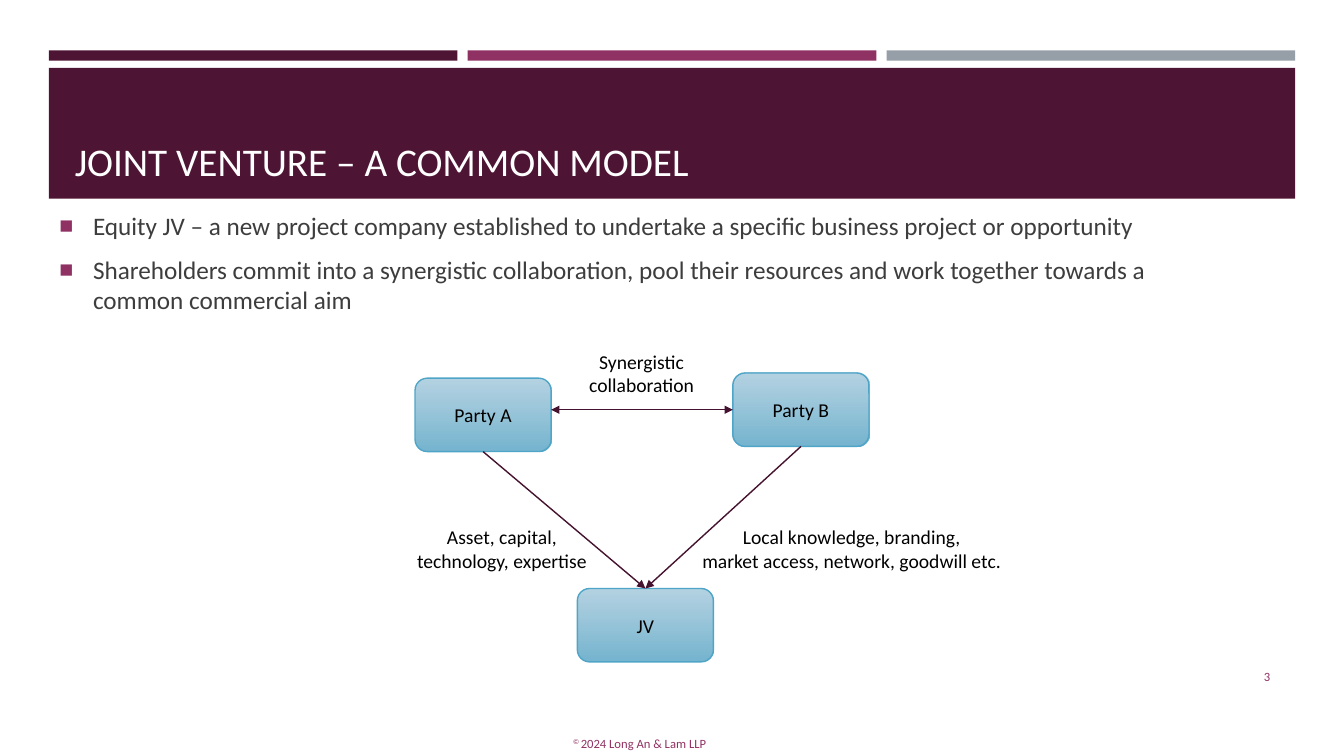
from lxml.etree import SubElement
from pptx import Presentation
from pptx.dml.color import RGBColor
from pptx.enum.shapes import MSO_CONNECTOR, MSO_SHAPE
from pptx.enum.text import MSO_ANCHOR, PP_ALIGN
from pptx.oxml.ns import qn
from pptx.util import Cm, Pt

FONT = "Calibri"
PLUM, ROSE, GREY = "4D1434", "903163", "969FA7"
ARROW, EDGE, BLACK = "45122F", "4FA5C7", "000000"


def paint(color, code):
    color.rgb = RGBColor.from_string(code)


def style(para, size, code, align):
    para.alignment = align
    para.font.name, para.font.size = FONT, Pt(size)
    paint(para.font.color, code)


def write(frame, text, size, code, align=PP_ALIGN.CENTER, anchor=MSO_ANCHOR.TOP):
    frame.word_wrap = True
    frame.vertical_anchor = anchor
    frame.text = text
    for para in frame.paragraphs:
        style(para, size, code, align)


def place(shape, left, top, width, height):
    shape.left, shape.top = Cm(left), Cm(top)
    shape.width, shape.height = Cm(width), Cm(height)


def add_text(slide, box, *args, **kwargs):
    text = slide.shapes.add_textbox(*map(Cm, box))
    write(text.text_frame, *args, **kwargs)
    return text


def add_bar(slide, box, code):
    bar = slide.shapes.add_shape(MSO_SHAPE.RECTANGLE, *map(Cm, box))
    bar.shadow.inherit = False
    bar.fill.solid()
    paint(bar.fill.fore_color, code)
    bar.line.fill.background()


def add_head(slide, left, top, width, height):
    # Three thin bars in equal columns
    gap = 0.26
    span = (width - 2 * gap) / 3
    for col, code in enumerate((PLUM, ROSE, GREY)):
        add_bar(slide, (left + col * (span + gap), top, span, 0.26), code)

    # Banner, placed in front of the tree so that the title stays on top
    add_bar(slide, (left, top + 0.44, width, height - 0.44), PLUM)
    title = slide.shapes.title
    slide.shapes._spTree.append(title._element)
    place(title, left + 0.4, top + 0.69, width - 0.8, height - 0.92)
    write(title.text_frame, "JOINT VENTURE – A COMMON MODEL", 28, "FFFFFF",
          PP_ALIGN.LEFT, MSO_ANCHOR.BOTTOM)


def add_list(slide, left, top, width, height):
    body = slide.placeholders[1]
    place(body, left, top, width, height)
    frame = body.text_frame
    frame.text = (
        "Equity JV – a new project company established to undertake "
        "a specific business project or opportunity\n"
        "Shareholders commit into a synergistic collaboration, pool their "
        "resources and work together towards a common commercial aim")
    frame.vertical_anchor = MSO_ANCHOR.MIDDLE
    for row, para in enumerate(frame.paragraphs):
        # Square bullet with a hanging indent
        props = para._p.get_or_add_pPr()
        props.set("marL", str(Cm(0.85)))
        props.set("indent", str(-Cm(0.85)))
        tint = SubElement(props, qn("a:buClr"))
        SubElement(tint, qn("a:srgbClr"), val=ROSE)
        SubElement(props, qn("a:buSzPct"), val="92000")
        SubElement(props, qn("a:buChar"), char="■")
        para.space_before = Pt(3.6 if row else 0)
        para.space_after = Pt(6)
        style(para, 18, "3D3D3D", PP_ALIGN.LEFT)


def add_party(slide, left, top, name):
    party = slide.shapes.add_shape(
        MSO_SHAPE.ROUNDED_RECTANGLE, Cm(left), Cm(top), Cm(3.43), Cm(1.85))
    party.shadow.inherit = False
    party.fill.gradient()
    party.fill.gradient_angle = 270
    for stop, code in zip(party.fill.gradient_stops, ("ACCEDF", "75B4CF")):
        paint(stop.color, code)
    # The upper stop is slightly transparent
    first = next(party._element.spPr.iter(qn("a:srgbClr")))
    SubElement(first, qn("a:alpha"), val="90000")
    paint(party.line.color, EDGE)
    party.line.width = Pt(1)
    write(party.text_frame, name, 14, BLACK, anchor=MSO_ANCHOR.MIDDLE)
    return party


def add_arrow(slide, start, end, ends=("tailEnd",)):
    arrow = slide.shapes.add_connector(MSO_CONNECTOR.STRAIGHT, *start, *end)
    paint(arrow.line.color, ARROW)
    arrow.line.width = Pt(1)
    for tip in ends:
        SubElement(arrow.line._ln, qn("a:" + tip), type="triangle")
    SubElement(arrow._element.spPr, qn("a:effectLst"))
    return arrow


def add_model(slide, left, top):
    # Parties and their company
    one = add_party(slide, left + 0.68, top + 0.84, "Party A")
    two = add_party(slide, left + 8.69, top + 0.71, "Party B")
    joint = add_party(slide, left + 4.77, top + 6.14, "JV")

    # Contributions
    for party in (one, two):
        arrow = add_arrow(slide, (0, 0), (0, 0))
        arrow.begin_connect(party, 2)
        arrow.end_connect(joint, 0)

    # Level link between the parties
    level = two.top + two.height // 2
    link = add_arrow(slide, (one.left + one.width, level), (two.left, level),
                     ("headEnd", "tailEnd"))
    link.end_connect(two, 1)

    # Labels
    for x, y, width, text in (
            (3.1, 0, 6.58, "Synergistic\ncollaboration"),
            (0, 4.42, 5.74, "Asset, capital,\ntechnology, expertise"),
            (7.24, 4.42, 8.89, "Local knowledge, branding,\n"
                               "market access, network, goodwill etc.")):
        add_text(slide, (left + x, top + y, width, 1.45), text, 14, BLACK)


def add_foot(slide, left, top, width, height):
    # Slide number at the right, copyright line below
    add_text(slide, (left + width - 2.92, top, 2.92, 1.02), "3", 9, ROSE,
             PP_ALIGN.RIGHT, MSO_ANCHOR.MIDDLE)
    note = add_text(slide, (left, top + height - 0.64, 16.94, 0.64), "© ", 9, ROSE)
    para = note.text_frame.paragraphs[0]
    para.runs[0].font._element.set("baseline", "30000")
    para.add_run().text = "2024 Long An & Lam LLP"


def main():
    deck = Presentation()
    deck.slide_width, deck.slide_height = Cm(33.87), Cm(19.05)
    slide = deck.slides.add_slide(deck.slide_layouts[1])
    add_head(slide, 1.23, 1.27, 31.41, 3.74)
    add_list(slide, 1.24, 5.21, 29.87, 2.82)
    add_model(slide, 9.78, 8.69)
    add_foot(slide, 7.65, 16.54, 24.61, 2.52)
    deck.save("out.pptx")


if __name__ == "__main__":
    main()
